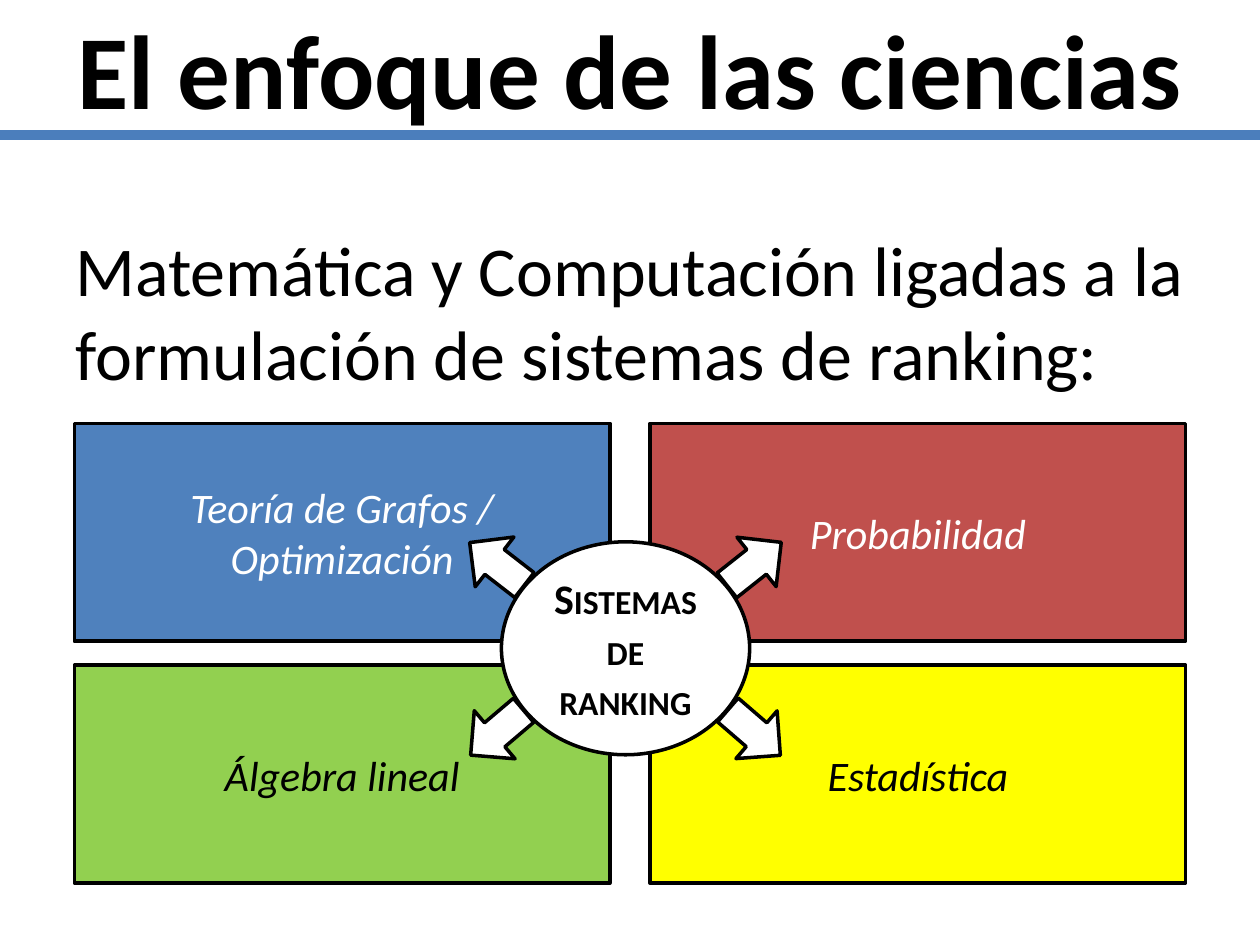
from dataclasses import dataclass

from lxml.etree import SubElement
from pptx import Presentation
from pptx.dml.color import RGBColor
from pptx.enum.shapes import MSO_CONNECTOR, MSO_SHAPE
from pptx.enum.text import MSO_ANCHOR, MSO_AUTO_SIZE, PP_ALIGN
from pptx.oxml.ns import qn
from pptx.util import Inches, Pt


@dataclass(frozen=True)
class Theme:
    font: str = "Calibri"
    black: str = "000000"
    white: str = "FFFFFF"
    rule: str = "4B7EBC"
    blue: str = "4F81BD"
    red: str = "C0504D"
    green: str = "92D050"
    yellow: str = "FFFF00"
    title_size: int = 60
    body_size: int = 40
    label_size: int = 24
    rule_width: int = 6
    outline_width: int = 2


THEME = Theme()


def color(value):
    return RGBColor.from_string(value)


def place(shape, box):
    shape.left, shape.top, shape.width, shape.height = map(Inches, box)


def add_run(paragraph, text, size, text_color=THEME.black, bold=False, italic=False):
    run = paragraph.add_run()
    run.text = text
    font = run.font
    font.name, font.size = THEME.font, Pt(size)
    font.bold, font.italic = bold, italic
    font.color.rgb = color(text_color)
    return run


def add_outlined_shape(slide, kind, box, fill):
    shape = slide.shapes.add_shape(kind, *map(Inches, box))
    shape.shadow.inherit = False
    shape.fill.solid()
    shape.fill.fore_color.rgb = color(fill)
    shape.line.color.rgb = color(THEME.black)
    shape.line.width = Pt(THEME.outline_width)
    return shape


def add_header(slide, box):
    """Place the title in the box and a rule along its bottom, across the slide."""
    left, top, width, height = box
    title = slide.shapes.title
    place(title, box)
    frame = title.text_frame
    frame.auto_size = MSO_AUTO_SIZE.NONE
    frame.vertical_anchor = MSO_ANCHOR.MIDDLE
    add_run(frame.paragraphs[0], "El enfoque de las ciencias", THEME.title_size, bold=True)

    bottom = Inches(top + height)
    rule = slide.shapes.add_connector(
        MSO_CONNECTOR.STRAIGHT, 0, bottom, Inches(2 * left + width), bottom)
    rule.line.color.rgb = color(THEME.rule)
    rule.line.width = Pt(THEME.rule_width)
    SubElement(rule._element.spPr, qn("a:effectLst"))


def add_introduction(slide, box):
    body = slide.placeholders[1]
    place(body, box)
    frame = body.text_frame
    frame.auto_size = MSO_AUTO_SIZE.NONE
    paragraph = frame.paragraphs[0]
    properties = paragraph._p.get_or_add_pPr()
    properties.set("marL", "0")
    properties.set("indent", "0")
    SubElement(properties, qn("a:buNone"))
    add_run(paragraph,
            "Matemática y Computación ligadas a la formulación de sistemas de ranking:",
            THEME.body_size)


def add_fields(slide, box):
    """Fill the box with a two by two grid of labelled fields."""
    left, top, width, height = box
    field_width, field_height = 4.25, 1.73
    fields = (
        ("Teoría de Grafos / Optimización", THEME.blue, THEME.white),
        ("Probabilidad", THEME.red, THEME.white),
        ("Álgebra lineal", THEME.green, THEME.black),
        ("Estadística", THEME.yellow, THEME.black),
    )
    for index, (label, fill, text_color) in enumerate(fields):
        row, column = divmod(index, 2)
        field_box = (left + column * (width - field_width),
                     top + row * (height - field_height), field_width, field_height)
        field = add_outlined_shape(slide, MSO_SHAPE.RECTANGLE, field_box, fill)
        frame = field.text_frame
        frame.word_wrap = True
        frame.vertical_anchor = MSO_ANCHOR.MIDDLE
        paragraph = frame.paragraphs[0]
        paragraph.alignment = PP_ALIGN.CENTER
        add_run(paragraph, label, THEME.label_size, text_color, italic=True)


def add_hub(slide, box):
    """Place the central ellipse in the box, with four arrows pointing outwards."""
    left, top, width, height = box
    hub = add_outlined_shape(slide, MSO_SHAPE.OVAL, box, THEME.white)
    frame = hub.text_frame
    frame.word_wrap = True
    frame.vertical_anchor = MSO_ANCHOR.MIDDLE
    for index, word in enumerate(("Sistemas", "de", "ranking")):
        paragraph = frame.add_paragraph() if index else frame.paragraphs[0]
        paragraph.alignment = PP_ALIGN.CENTER
        run = add_run(paragraph, word, THEME.label_size, bold=True)
        run._r.get_or_add_rPr().set("cap", "small")

    arrow_width, arrow_height = 0.55, 0.5
    offset_x, offset_y = 1.02, 0.67
    center_x, center_y = left + width / 2, top + height / 2
    for side_x, side_y, angle in ((1, 1, 40.8), (-1, -1, 217.8),
                                  (1, -1, 321.6), (-1, 1, 139.7)):
        arrow_box = (center_x + side_x * offset_x - arrow_width / 2,
                     center_y + side_y * offset_y - arrow_height / 2,
                     arrow_width, arrow_height)
        arrow = add_outlined_shape(slide, MSO_SHAPE.RIGHT_ARROW, arrow_box, THEME.white)
        arrow.rotation = angle


def main():
    presentation = Presentation()
    presentation.slide_width, presentation.slide_height = Inches(10), Inches(7.5)
    slide = presentation.slides.add_slide(presentation.slide_layouts[1])
    add_header(slide, (0.5, 0, 9, 1.07))
    add_introduction(slide, (0.5, 1.75, 9, 4.95))
    add_fields(slide, (0.59, 3.36, 8.82, 3.65))
    add_hub(slide, (3.98, 4.3, 1.97, 1.69))
    presentation.save("out.pptx")


if __name__ == "__main__":
    main()
